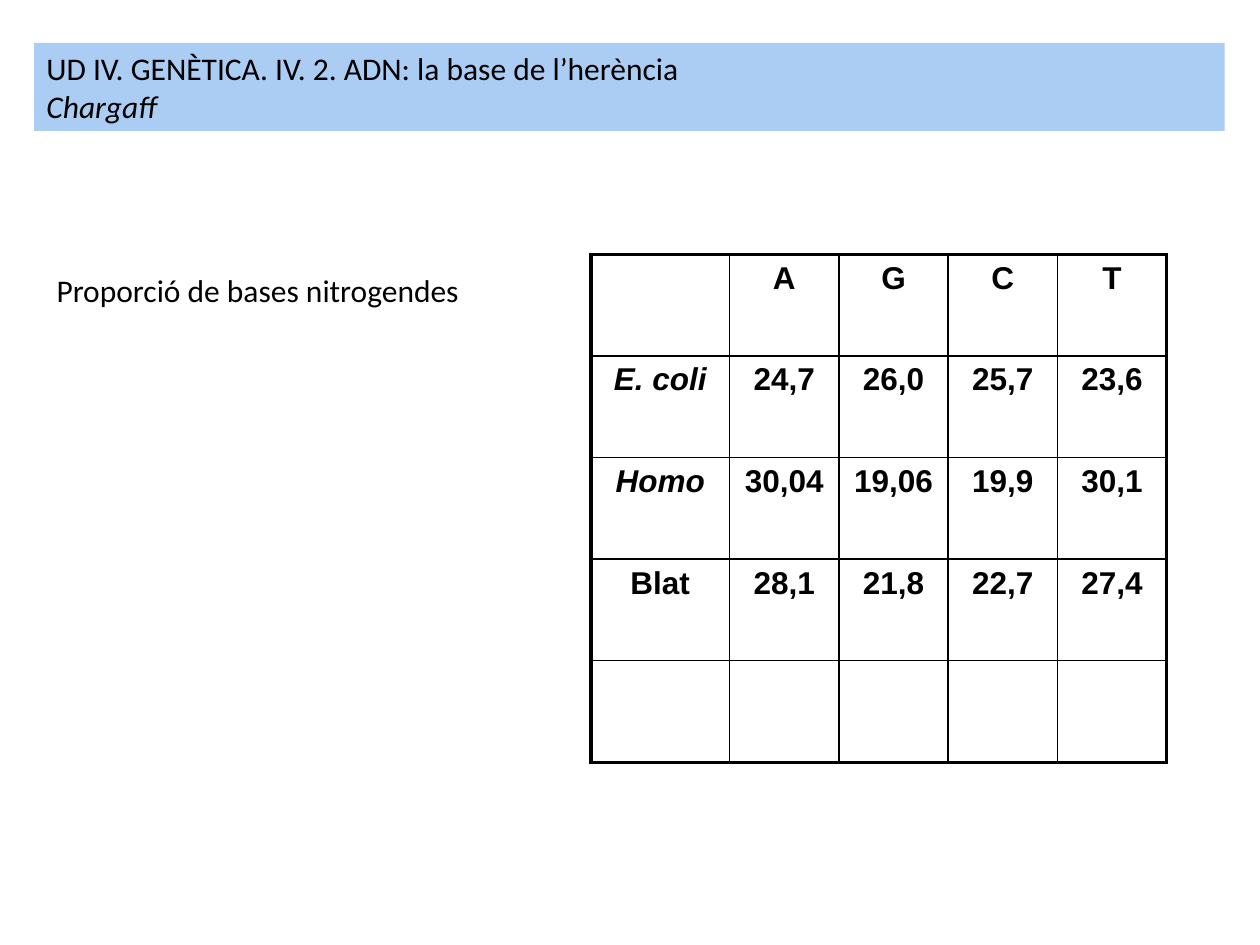
from lxml.etree import SubElement
from pptx import Presentation
from pptx.dml.color import RGBColor
from pptx.enum.shapes import MSO_SHAPE as Shape
from pptx.enum.text import MSO_ANCHOR as Anchor, PP_ALIGN as Align
from pptx.oxml.ns import qn
from pptx.util import Inches, Pt

BLACK = "000000"
BANNER_BLUE = "ABCDF3"
THIN, THICK = 1, 2.25
BASES = [
    ["", "A", "G", "C", "T"],
    ["E. coli", "24,7", "26,0", "25,7", "23,6"],
    ["Homo", "30,04", "19,06", "19,9", "30,1"],
    ["Blat", "28,1", "21,8", "22,7", "27,4"],
    ["", "", "", "", ""],
]
LATIN_NAMES = {"E. coli", "Homo"}


def color(hex_code):
    return RGBColor.from_string(hex_code)


def write(paragraph, text, font="Calibri", size=18, bold=False, italic=False,
          align=Align.LEFT):
    paragraph.alignment = align
    run = paragraph.add_run()
    run.text = text
    run.font.name = font
    run.font.size = Pt(size)
    run.font.bold = bold
    run.font.italic = italic
    run.font.color.rgb = color(BLACK)


def add_banner(slide, left, top, width, height):
    banner = slide.shapes.add_shape(Shape.RECTANGLE, left, top, width, height)
    banner.shadow.inherit = False
    banner.fill.solid()
    banner.fill.fore_color.rgb = color(BANNER_BLUE)
    banner.line.fill.background()
    frame = banner.text_frame
    frame.word_wrap = True
    frame.vertical_anchor = Anchor.TOP
    write(frame.paragraphs[0], "UD IV. GENÈTICA. IV. 2. ADN: la base de l’herència")
    write(frame.add_paragraph(), "Chargaff", italic=True)


def add_label(slide, left, top, width, height):
    frame = slide.shapes.add_textbox(left, top, width, height).text_frame
    frame.word_wrap = True
    write(frame.paragraphs[0], "Proporció de bases nitrogendes")


def set_borders(cell, widths):
    properties = cell._tc.get_or_add_tcPr()
    for side, width in widths.items():
        line = SubElement(properties, qn(f"a:ln{side}"), w=str(Pt(width)))
        fill = SubElement(line, qn("a:solidFill"))
        SubElement(fill, qn("a:srgbClr"), val=BLACK)


def add_bases_table(slide, left, top, width, height):
    row_count, column_count = len(BASES), len(BASES[0])
    table = slide.shapes.add_table(row_count, column_count,
                                   left, top, width, height).table
    # The name column is wider; the bases share the rest equally
    name_width = Inches(1.1)
    for index, column in enumerate(table.columns):
        column.width = (name_width if index == 0
                        else (width - name_width) // (column_count - 1))

    for row, values in enumerate(BASES):
        for column, value in enumerate(values):
            cell = table.cell(row, column)
            # Thick frame outside, thin grid inside
            set_borders(cell, {
                "L": THICK if column == 0 else THIN,
                "R": THICK if column == column_count - 1 else THIN,
                "T": THICK if row == 0 else THIN,
                "B": THICK if row == row_count - 1 else THIN,
            })
            cell.fill.background()
            if value:
                write(cell.text_frame.paragraphs[0], value, font="Arial",
                      bold=True, italic=value in LATIN_NAMES, align=Align.CENTER)


def main():
    presentation = Presentation()
    presentation.slide_width = Inches(10)
    presentation.slide_height = Inches(7.5)
    slide = presentation.slides.add_slide(presentation.slide_layouts[6])
    add_banner(slide, Inches(0.27), Inches(0.34), Inches(9.45), Inches(0.7))
    add_bases_table(slide, Inches(4.69), Inches(2.02), Inches(4.57), Inches(4.03))
    add_label(slide, Inches(0.35), Inches(2.1), Inches(3.78), Inches(0.4))
    presentation.save("out.pptx")


if __name__ == "__main__":
    main()
